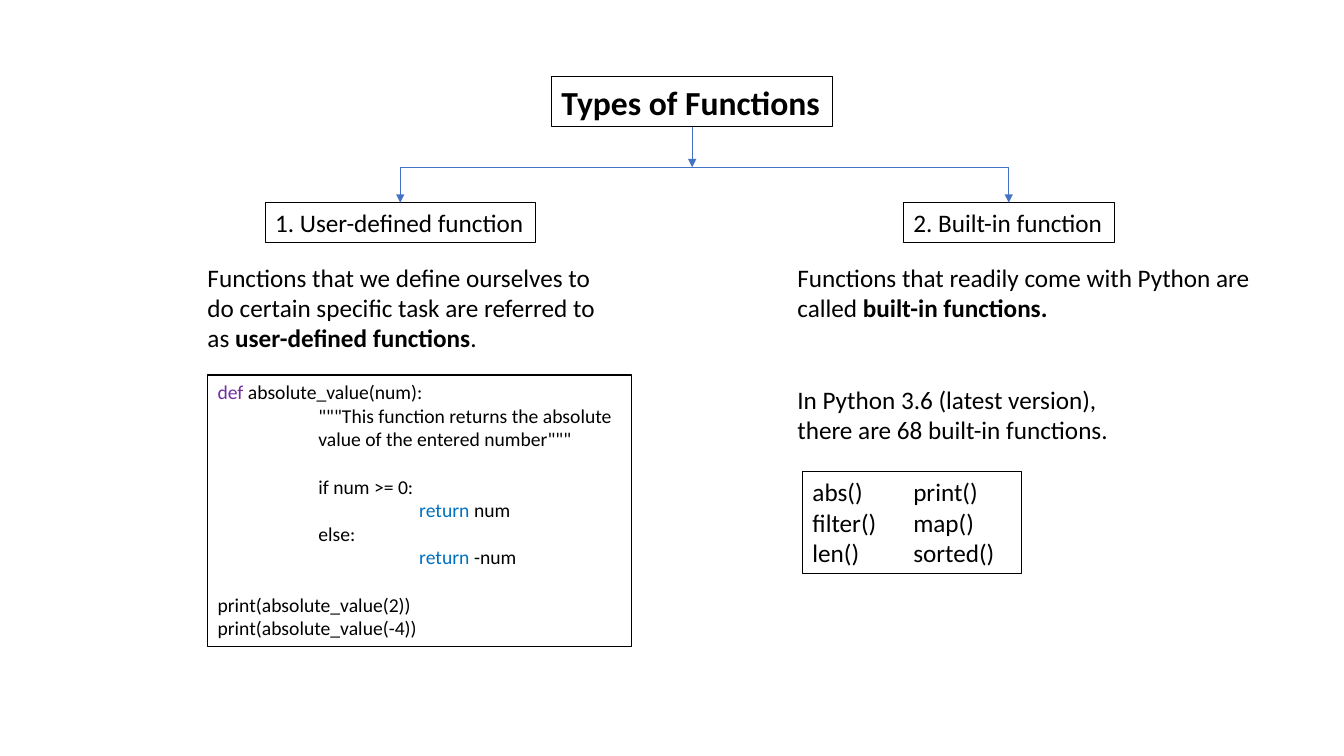
"""Build a slide that sorts functions into user-defined and built-in."""
from lxml import etree
from pptx import Presentation, util as u
from pptx.dml.color import RGBColor
from pptx.enum import shapes, text
from pptx.oxml.ns import qn

BLACK = RGBColor(0x00, 0x00, 0x00)
PURPLE = RGBColor(0x70, 0x30, 0xA0)
SKY = RGBColor(0x00, 0x70, 0xC0)
BLUE = RGBColor(0x44, 0x72, 0xC4)
FONT = "Calibri"
CELL = 0.1
RAIL = 16.6
TABS = (1, 2)
BOLD = {"bold": True}
DEF = {"color": PURPLE}
RET = {"color": SKY}

CODE = [
    [("def ", DEF), "absolute_value(num):"],
    ['\t"""This function returns the absolute'],
    ['\tvalue of the entered number"""'],
    ["\tif num >= 0:"],
    ["\t\t", ("return ", RET), "num"],
    ["\telse:"],
    ["\t\t", ("return", RET), " -num"],
    ["print(absolute_value(2))"],
    ["print(absolute_value(-4))"],
]
USER = [["Functions that we define ourselves to do certain specific task are referred to as ",
         ("user-defined functions", BOLD), "."]]
BUILT = [["Functions that readily come with Python are called ",
          ("built-in functions.", BOLD)]]
COUNT = [["In Python 3.6 (latest version),"], ["there are 68 built-in functions."]]
NAMES = [["abs()\tprint()"], ["filter()\tmap()"], ["len()\tsorted()"]]

# name: (left, top, width, height in cells), points, framed, wrapped, gaps, lines
PARTS = {
    "title": ((54.7, 7.6, 27.9, 5), 24, True, False, (), [[("Types of Functions", BOLD)]]),
    "user": ((26.3, 20.1, 26.8, 4), 18, True, False, (), [["1. User-defined function"]]),
    "user text": ((19.6, 25.5, 43, 10.1), 18, False, True, (), USER),
    "built": ((89.6, 20.1, 20.9, 4), 18, True, False, (), [["2. Built-in function"]]),
    "code": ((20.6, 37.2, 42, 26.9), 14, True, True, (3, 7), CODE),
    "built text": ((78.1, 25.5, 47.4, 7.1), 18, False, True, (), BUILT),
    "names": ((79.6, 46.8, 21.7, 10.1), 18, True, True, (), NAMES),
    "count": ((78.1, 37.6, 33.2, 7.1), 18, False, False, (), COUNT),
}


def grid(n):
    return u.Inches(n * CELL)


def write(par, runs, size):
    stops = etree.SubElement(par._p.get_or_add_pPr(), qn("a:tabLst"))
    for stop in TABS:
        etree.SubElement(stops, qn("a:tab"), pos=str(u.Inches(stop)), algn="l")
    for item in runs:
        words, extra = (item, {}) if isinstance(item, str) else item
        run = par.add_run()
        run.text = words
        look = {"name": FONT, "size": u.Pt(size), "bold": False, "color": BLACK} | extra
        run.font.color.rgb = look.pop("color")
        for key, val in look.items():
            setattr(run.font, key, val)


def place(slide, box, size, framed, wrap, gaps, lines):
    spot = [grid(n) for n in box]
    if framed:
        shape = slide.shapes.add_shape(shapes.MSO_SHAPE.RECTANGLE, *spot)
        shape.shadow.inherit = False
        shape.fill.background()
        shape.line.color.rgb = BLACK
        shape.line.width = u.Pt(0.75)
    else:
        shape = slide.shapes.add_textbox(*spot)
    frame = shape.text_frame
    frame.word_wrap = wrap
    frame.vertical_anchor = text.MSO_ANCHOR.TOP
    for i, runs in enumerate(lines):
        par = frame.paragraphs[0] if i == 0 else frame.add_paragraph()
        par.alignment = text.PP_ALIGN.LEFT
        if i in gaps:
            par.space_before = u.Pt(size * 1.22)
        write(par, runs, size)
    return shape


def link(slide, start, end, arrow=True):
    line = slide.shapes.add_connector(shapes.MSO_CONNECTOR.STRAIGHT, *start, *end)
    line.line.color.rgb = BLUE
    line.line.width = u.Pt(0.5)
    if arrow:
        etree.SubElement(line.line._get_or_add_ln(), qn("a:tailEnd"), type="triangle")
    etree.SubElement(line._element.spPr, qn("a:effectLst"))
    return line


def main():
    deck = Presentation()
    deck.slide_width, deck.slide_height = u.Inches(13.33), u.Inches(7.5)
    slide = deck.slides.add_slide(deck.slide_layouts[6])
    made = {name: place(slide, *part) for name, part in PARTS.items()}

    mid = {name: made[name].left + made[name].width // 2 for name in ("title", "user", "built")}
    rail = grid(RAIL)
    title = made["title"]
    stem = link(slide, (mid["title"], title.top + title.height), (mid["title"], rail))
    stem.begin_connect(title, 2)
    link(slide, (mid["user"], rail), (mid["built"], rail), arrow=False)
    for name in ("user", "built"):
        drop = link(slide, (mid[name], rail), (mid[name], made[name].top))
        drop.end_connect(made[name], 0)
    deck.save("out.pptx")


if __name__ == "__main__":
    main()
